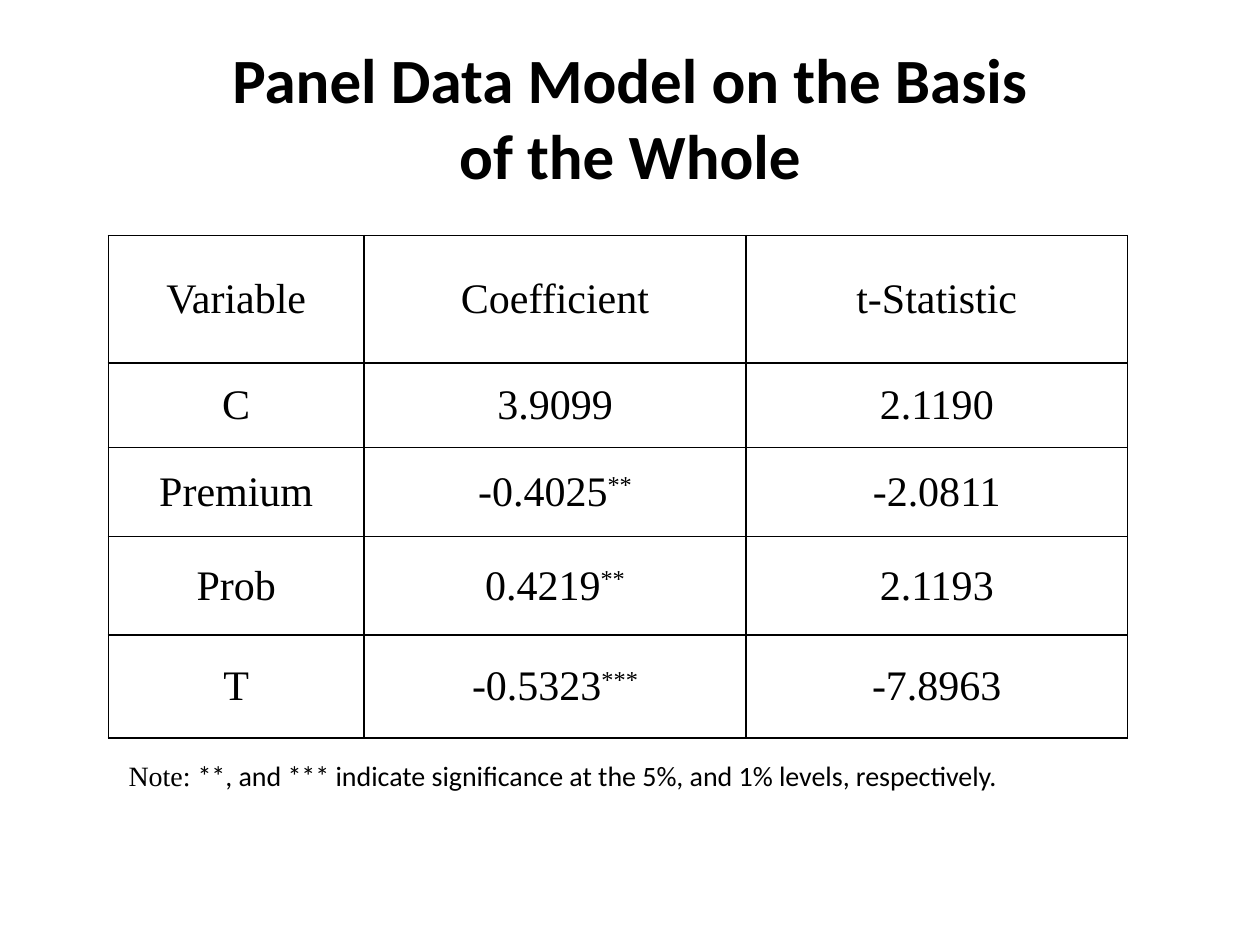
from lxml.etree import SubElement
from pptx import Presentation
from pptx.dml.color import RGBColor
from pptx.enum.text import MSO_ANCHOR as Anchor, MSO_AUTO_SIZE as AutoSize, PP_ALIGN as Align
from pptx.oxml.ns import qn
from pptx.util import Pt

PX = 9144
INK = "000000"
SERIF = "Times New Roman"
SANS = "Calibri"
COLUMNS = [203, 303, 303]
ROWS = [101, 67, 71, 78, 82]
RESULTS = [
    [("Variable", ""), ("Coefficient", ""), ("t-Statistic", "")],
    [("C", ""), ("3.9099", ""), ("2.1190", "")],
    [("Premium", ""), ("-0.4025", "**"), ("-2.0811", "")],
    [("Prob", ""), ("0.4219", "**"), ("2.1193", "")],
    [("T", ""), ("-0.5323", "***"), ("-7.8963", "")],
]


def px(*lengths):
    return [length * PX for length in lengths]


def color(hex_string):
    return RGBColor.from_string(hex_string)


def write(paragraph, text, font=SERIF, size=24, bold=False, baseline=0, ink=INK):
    run = paragraph.add_run()
    run.text = text
    run.font.name = font
    run.font.size = Pt(size)
    run.font.bold = bold
    run.font.color.rgb = color(ink)
    if baseline:
        run.font._element.set("baseline", str(baseline * 1000))


def add_borders(cell, ink=INK, width=1):
    properties = cell._tc.get_or_add_tcPr()
    for position, side in enumerate(("lnL", "lnR", "lnT", "lnB")):
        line = SubElement(properties, qn(f"a:{side}"), w=str(Pt(width)))
        fill = SubElement(line, qn("a:solidFill"))
        SubElement(fill, qn("a:srgbClr"), val=ink)
        properties.insert(position, line)


def add_heading(slide, left, top, width, height):
    heading = slide.shapes.title
    heading.left, heading.top, heading.width, heading.height = px(left, top, width, height)
    frame = heading.text_frame
    frame.vertical_anchor = Anchor.MIDDLE
    paragraph = frame.paragraphs[0]
    paragraph.alignment = Align.CENTER
    write(paragraph, "Panel Data Model on the Basis", font=SANS, size=36, bold=True)
    paragraph.add_line_break()
    write(paragraph, "of the Whole", font=SANS, size=36, bold=True)


def add_results(slide, left, top):
    box = px(left, top, sum(COLUMNS), sum(ROWS))
    results = slide.shapes.add_table(len(ROWS), len(COLUMNS), *box).table
    results.first_row = results.horz_banding = False
    for column, width in zip(results.columns, px(*COLUMNS)):
        column.width = width
    for row, height, entries in zip(results.rows, px(*ROWS), RESULTS):
        row.height = height
        for cell, (value, stars) in zip(row.cells, entries):
            cell.fill.background()
            cell.vertical_anchor = Anchor.MIDDLE
            add_borders(cell)
            paragraph = cell.text_frame.paragraphs[0]
            paragraph.alignment = Align.CENTER
            write(paragraph, value)
            if stars:
                write(paragraph, stars, baseline=30)


def add_note(slide, left, top, width, height):
    frame = slide.shapes.add_textbox(*px(left, top, width, height)).text_frame
    frame.word_wrap = True
    frame.auto_size = AutoSize.SHAPE_TO_FIT_TEXT
    frame.margin_left = frame.margin_top = frame.margin_right = frame.margin_bottom = 0
    paragraph = frame.paragraphs[0]
    paragraph.space_before = Pt(1.6)
    write(paragraph, "Note: ", size=16)
    write(paragraph, "**, and *** indicate significance at the 5%, and 1% levels, respectively.",
          font=SANS, size=16)


def main():
    deck = Presentation()
    deck.slide_width, deck.slide_height = px(1000, 750)
    slide = deck.slides.add_slide(deck.slide_layouts[5])
    add_heading(slide, 50, 30, 900, 125)
    add_results(slide, 86, 187)
    add_note(slide, 102, 602, 789, 27)
    deck.save("out.pptx")


if __name__ == "__main__":
    main()
